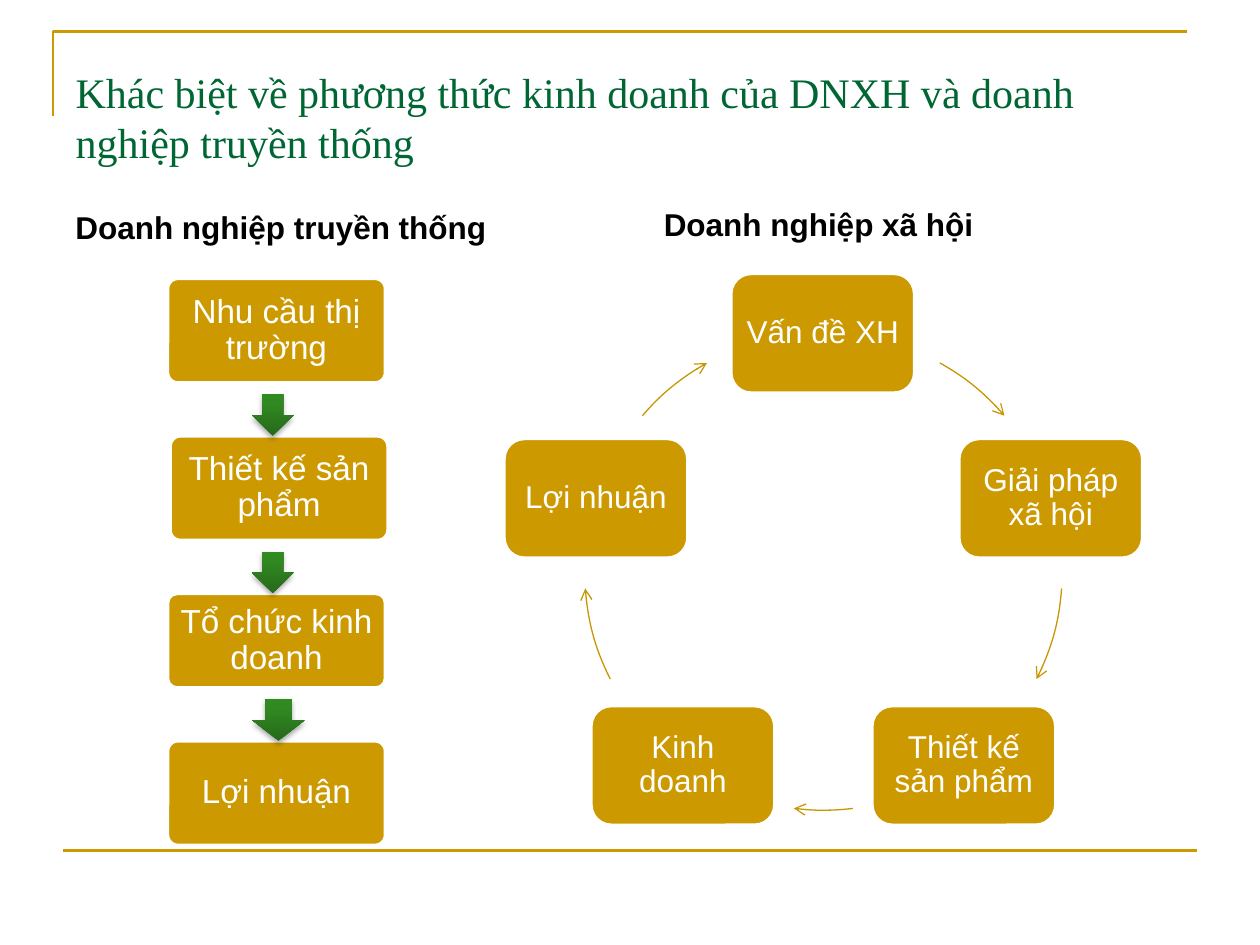
import copy
from lxml import etree
from pptx import Presentation, util as u
from pptx.dml.color import RGBColor
from pptx.enum import shapes, text
from pptx.oxml import ns

GOLD = RGBColor(0xCC, 0x99, 0x00)
ARC_GOLD = RGBColor(0xC8, 0x96, 0x00)
GREEN = RGBColor(0x00, 0x66, 0x33)
WHITE = RGBColor(0xFF, 0xFF, 0xFF)
BLACK = RGBColor(0x00, 0x00, 0x00)
ARROW_STOPS = [
    (0, RGBColor(0x26, 0x69, 0x1A)),
    (0.8, RGBColor(0x31, 0x89, 0x22)),
    (1, RGBColor(0x30, 0x8C, 0x20)),
]

TITLE = "Khác biệt về phương thức kinh doanh của DNXH và doanh nghiệp truyền thống"
HEADINGS = [
    ("Doanh nghiệp truyền thống", (0.5, 1.6, 3.75, 0.4)),
    ("Doanh nghiệp xã hội", (5.17, 1.58, 3.33, 0.4)),
]
STEPS = [
    ("Nhu cầu thị trường", 1.33, 2.21, 0.83),
    ("Thiết kế sản phẩm", 1.35, 3.46, 0.83),
    ("Tổ chức kinh doanh", 1.33, 4.71, 0.75),
    ("Lợi nhuận", 1.33, 5.88, 0.83),
]
STEP_WIDTH = 1.73
ARROW_WIDTHS = [0.33, 0.33, 0.42]
ARROW_LEFT, ARROW_HEIGHT = 2, 0.33
CYCLE = [
    ("Vấn đề XH", 5.8, 2.17),
    ("Giải pháp xã hội", 7.61, 3.48),
    ("Thiết kế sản phẩm", 6.92, 5.6),
    ("Kinh doanh", 4.69, 5.6),
    ("Lợi nhuận", 4, 3.48),
]
CYCLE_SIZE = (1.46, 0.95)
RING = (4.64, 2.64, 3.79, 3.79)
ARC_ANGLES = [(299.2, 319.3), (4.1, 26.8), (82.9, 97.1), (153.2, 175.9), (220.7, 240.8)]
ANGLE_UNIT = 0.6
FRAME = [(0.42, 0.92), (0.42, 0.25), (9.42, 0.25)]
MARGINS = ("margin_left", "margin_top", "margin_right", "margin_bottom")


def inches(*values):
    return [u.Inches(value) for value in values]


def apply(target, values):
    for name, value in values.items():
        setattr(target, name, value)


def set_line(shape, color, points):
    shape.line.color.rgb = color
    shape.line.width = u.Pt(points)


def write(frame, content, font, align=text.PP_ALIGN.LEFT, anchor=text.MSO_ANCHOR.TOP):
    apply(frame, {"word_wrap": True, "vertical_anchor": anchor})
    frame.text = content
    paragraph = frame.paragraphs[0]
    paragraph.alignment = align
    color = font["color"]
    apply(paragraph.runs[0].font, {k: v for k, v in font.items() if k != "color"})
    paragraph.runs[0].font.color.rgb = color
    return paragraph


def add_preset(slide, kind, box):
    shape = slide.shapes.add_shape(kind, *inches(*box))
    shape.shadow.inherit = False
    return shape


def add_box(slide, content, box, corner, points, margin):
    shape = add_preset(slide, shapes.MSO_SHAPE.ROUNDED_RECTANGLE, box)
    shape.adjustments[0] = corner
    shape.fill.solid()
    shape.fill.fore_color.rgb = GOLD
    set_line(shape, WHITE, 2)
    apply(shape.text_frame, {name: u.Inches(margin) for name in MARGINS})
    font = {"name": "Arial", "size": u.Pt(points), "color": WHITE}
    paragraph = write(shape.text_frame, content, font,
                      text.PP_ALIGN.CENTER, text.MSO_ANCHOR.MIDDLE)
    paragraph.line_spacing = 0.9


def add_down_arrow(slide, box):
    shape = add_preset(slide, shapes.MSO_SHAPE.DOWN_ARROW, box)
    shape.line.fill.background()
    shape.fill.gradient()
    shape.fill.gradient_angle = 90
    properties = shape._element.spPr
    stop_list = properties.find(".//" + ns.qn("a:gsLst"))
    stop_list.append(copy.deepcopy(stop_list[0]))
    for stop, (position, color) in zip(shape.fill.gradient_stops, ARROW_STOPS):
        stop.position = position
        stop.color.rgb = color
    shadow = etree.SubElement(
        properties.find(ns.qn("a:effectLst")), ns.qn("a:outerShdw"),
        blurRad=str(u.Pt(3.1)), dist=str(u.Pt(1.8)), dir="5400000", rotWithShape="0")
    color = etree.SubElement(shadow, ns.qn("a:srgbClr"), val=str(BLACK))
    etree.SubElement(color, ns.qn("a:alpha"), val="35000")


def add_arc(slide, angles):
    shape = add_preset(slide, shapes.MSO_SHAPE.ARC, RING)
    for index, angle in enumerate(angles):
        shape.adjustments[index] = angle * ANGLE_UNIT
    shape.fill.background()
    set_line(shape, ARC_GOLD, 0.75)
    line = shape._element.spPr.find(ns.qn("a:ln"))
    etree.SubElement(line, ns.qn("a:tailEnd"), type="arrow")


def add_frame(slide):
    points = [inches(*point) for point in FRAME]
    builder = slide.shapes.build_freeform(*points[0])
    builder.add_line_segments(points[1:], close=False)
    corner = builder.convert_to_shape()
    corner.shadow.inherit = False
    corner.fill.background()
    set_line(corner, GOLD, 1.5)
    rule = slide.shapes.add_connector(
        shapes.MSO_CONNECTOR.STRAIGHT, *inches(0.5, 6.75, 9.5, 6.75))
    set_line(rule, GOLD, 1.5)
    etree.SubElement(rule._element.spPr, ns.qn("a:effectLst"))


def main():
    presentation = Presentation()
    apply(presentation, {"slide_width": u.Inches(10), "slide_height": u.Inches(7.5)})
    slide = presentation.slides.add_slide(presentation.slide_layouts[5])
    add_frame(slide)

    title = slide.shapes.title
    apply(title, dict(zip(("left", "top", "width", "height"), inches(0.5, 0.3, 9, 1.25))))
    write(title.text_frame, TITLE,
          {"name": "Times New Roman", "size": u.Pt(24), "color": GREEN},
          anchor=text.MSO_ANCHOR.MIDDLE)
    title.text_frame.auto_size = text.MSO_AUTO_SIZE.NONE

    for content, box in HEADINGS:
        heading = slide.shapes.add_textbox(*inches(*box))
        write(heading.text_frame, content,
              {"name": "Arial", "size": u.Pt(18), "bold": True, "color": BLACK})
        heading.text_frame.auto_size = text.MSO_AUTO_SIZE.SHAPE_TO_FIT_TEXT

    for content, left, top, height in STEPS:
        add_box(slide, content, (left, top, STEP_WIDTH, height), 0.1, 19, 0.08)
    for width, (_, _, next_top, _) in zip(ARROW_WIDTHS, STEPS[1:]):
        add_down_arrow(slide, (ARROW_LEFT, next_top - ARROW_HEIGHT, width, ARROW_HEIGHT))

    for (content, left, top), angles in zip(CYCLE, ARC_ANGLES):
        add_box(slide, content, (left, top, *CYCLE_SIZE), 0.17, 18, 0.07)
        add_arc(slide, angles)

    presentation.save("out.pptx")


if __name__ == "__main__":
    main()
